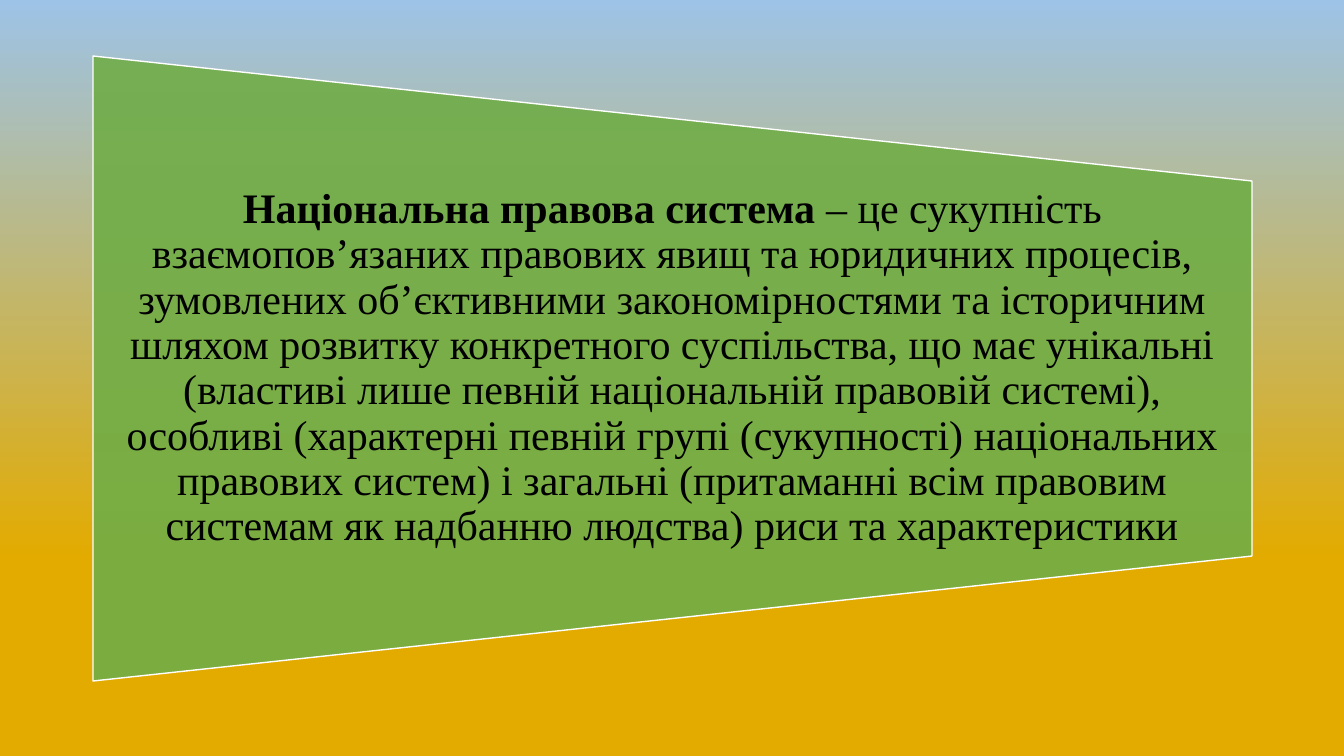
import pptx
import pptx.util
import pptx.dml.color
import pptx.enum.shapes
import pptx.enum.text
import pptx.oxml.ns
from lxml import etree

HUES = {"gold": "E3AB00", "sky": "9DC3E6", "green": "70AD47",
        "white": "FFFFFF", "black": "000000"}
TERM = "Національна правова система"
MEANING = (
    " – це сукупність взаємопов’язаних правових явищ та юридичних процесів, "
    "зумовлених об’єктивними закономірностями та історичним шляхом розвитку "
    "конкретного суспільства, що має унікальні (властиві лише певній "
    "національній правовій системі), особливі (характерні певній групі "
    "(сукупності) національних правових систем) і загальні (притаманні всім "
    "правовим системам як надбанню людства) риси та характеристики")


def px(count):
    """Turn pixels into EMU."""
    return pptx.util.Emu(round(count * 914400 / 100.8))


def hue(name):
    """Look up a named colour."""
    return pptx.dml.color.RGBColor.from_string(HUES[name])


def paint_back(slide):
    """Fill the background with gold rising into sky blue."""
    fill = slide.background.fill
    fill.gradient()
    fill.gradient_angle = 90
    for stop, name, place in zip(fill.gradient_stops, ("gold", "sky"), (0.26, 1)):
        stop.color.rgb = hue(name)
        stop.position = place


def add_panel(slide, left, top, width, height):
    """Draw the green panel, a trapezoid turned on its side to fill the box."""
    shift = (width - height) / 2
    panel = slide.shapes.add_shape(
        pptx.enum.shapes.MSO_SHAPE.FLOWCHART_MANUAL_OPERATION,
        px(left + shift), px(top - shift), px(height), px(width))
    panel.rotation = 270
    panel.shadow.inherit = False
    panel.fill.solid()
    panel.fill.fore_color.rgb = hue("green")
    tint = panel._element.spPr.find(".//" + pptx.oxml.ns.qn("a:srgbClr"))
    etree.SubElement(tint, pptx.oxml.ns.qn("a:alpha"), val="90000")
    panel.line.color.rgb = hue("white")
    panel.line.width = pptx.util.Pt(1)


def add_text(slide, left, top, width, height):
    """Set the definition in the middle of the box."""
    box = slide.shapes.add_textbox(px(left), px(top), px(width), px(height))
    frame = box.text_frame
    frame.word_wrap = True
    frame.vertical_anchor = pptx.enum.text.MSO_ANCHOR.MIDDLE
    frame.margin_left = frame.margin_right = px(21)
    frame.margin_top = frame.margin_bottom = 0
    para = frame.paragraphs[0]
    para.alignment = pptx.enum.text.PP_ALIGN.CENTER
    para.line_spacing = 0.9
    para.font.name = "Times New Roman"
    para.font.size = pptx.util.Pt(30)
    para.font.color.rgb = hue("black")
    for words, bold in ((TERM, True), (MEANING, False)):
        run = para.add_run()
        run.text = words
        run.font.bold = bold


def add_card(slide, left, top, width, height):
    """Place the panel and its text, one fifth in from top and bottom."""
    inset = height // 5
    add_panel(slide, left, top, width, height)
    add_text(slide, left, top + inset, width, height - 2 * inset)


def main():
    """Build and save the slide."""
    deck = pptx.Presentation()
    deck.slide_width, deck.slide_height = px(1344), px(756)
    slide = deck.slides.add_slide(deck.slide_layouts[6])
    paint_back(slide)
    add_card(slide, 93, 56, 1159, 625)
    deck.save("out.pptx")


if __name__ == "__main__":
    main()
